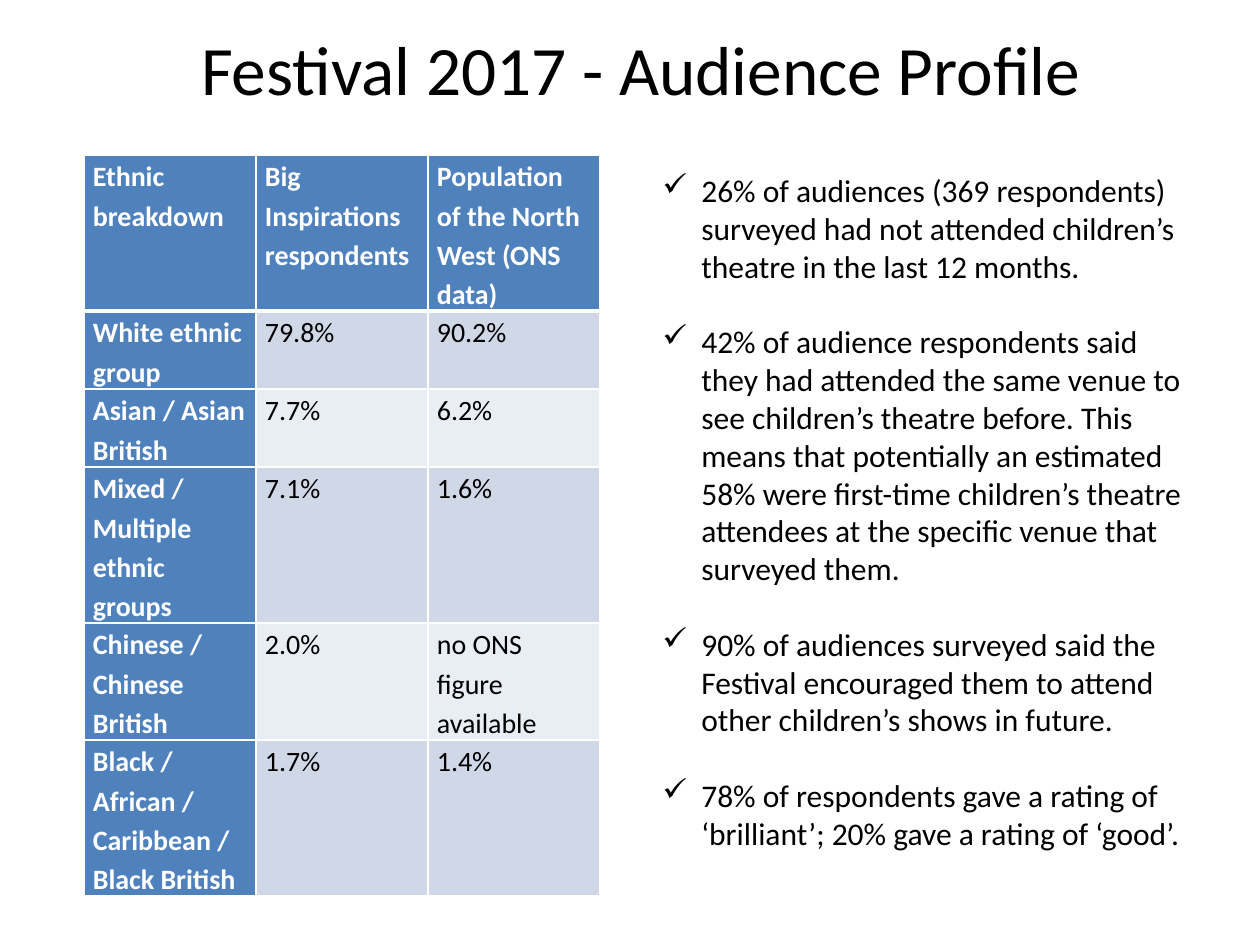
import pptx
import pptx.dml.color
import pptx.enum.text
import pptx.oxml.ns
import pptx.util
from lxml import etree

PX = 914400 // 126
FONT = "Calibri"
BLACK = pptx.dml.color.RGBColor(0x00, 0x00, 0x00)
WHITE = pptx.dml.color.RGBColor(0xFF, 0xFF, 0xFF)
BLUE = pptx.dml.color.RGBColor(0x4F, 0x81, 0xBD)
BAND_DARK = pptx.dml.color.RGBColor(0xD0, 0xD8, 0xE8)
BAND_LIGHT = pptx.dml.color.RGBColor(0xE9, 0xED, 0xF4)

TITLE = "Festival 2017 - Audience Profile"
ROWS = [
    ("Ethnic breakdown", "Big Inspirations respondents",
     "Population of the North West (ONS data)"),
    ("White ethnic group", "79.8%", "90.2%"),
    ("Asian / Asian British", "7.7%", "6.2%"),
    ("Mixed / Multiple ethnic groups", "7.1%", "1.6%"),
    ("Chinese / Chinese British", "2.0%", "no ONS figure available"),
    ("Black / African / Caribbean / Black British", "1.7%", "1.4%"),
]
ROW_LINES = [4, 2, 2, 4, 3, 4]
LINE_HEIGHT = 39
FINDINGS = [
    "26% of audiences (369 respondents) surveyed had not attended children’s "
    "theatre in the last 12 months.",
    "42% of audience respondents said they had attended the same venue to see "
    "children’s theatre before. This means that potentially an estimated 58% were "
    "first-time children’s theatre attendees at the specific venue that surveyed them.",
    "90% of audiences surveyed said the Festival encouraged them to attend other "
    "children’s shows in future.",
    "78% of respondents gave a rating of ‘brilliant’; 20% gave a rating of ‘good’.",
]


def px(n):
    """Turn whole pixels into EMU."""
    return pptx.util.Emu(n * PX)


def write(p, text, size, color, bold=False):
    """Set a paragraph's text and format its run."""
    p.text = text
    font = p.runs[0].font
    font.name = FONT
    font.size = pptx.util.Pt(size)
    font.bold = bold
    font.color.rgb = color


def add_text_frame(slide, x, y, w, h):
    """Add a wrapping text box and return its text frame."""
    tf = slide.shapes.add_textbox(px(x), px(y), px(w), px(h)).text_frame
    tf.word_wrap = True
    return tf


def add_title(slide, x, y, w, h):
    """Add the centred slide title."""
    tf = add_text_frame(slide, x, y, w, h)
    tf.margin_top = px(79)
    p = tf.paragraphs[0]
    p.alignment = pptx.enum.text.PP_ALIGN.CENTER
    write(p, TITLE, 39.6, BLACK)


def set_border(cell, side, points):
    """Draw one white border of a cell."""
    tc_pr = cell._tc.get_or_add_tcPr()
    ln = etree.SubElement(tc_pr, pptx.oxml.ns.qn(f"a:ln{side}"),
                          w=str(pptx.util.Pt(points)))
    fill = etree.SubElement(ln, pptx.oxml.ns.qn("a:solidFill"))
    etree.SubElement(fill, pptx.oxml.ns.qn("a:srgbClr"), val=str(WHITE))


def style_cell(cell, text, row, col):
    """Fill in one table cell according to its row and column."""
    heading = row == 0 or col == 0
    cell.margin_left = cell.margin_right = px(9)
    cell.margin_top = cell.margin_bottom = 0
    p = cell.text_frame.paragraphs[0]
    write(p, text, 16, WHITE if heading else BLACK, heading)
    p.line_spacing = 1.15
    widths = {"L": 1, "R": 1, "T": 3 if row == 1 else 1, "B": 3 if row == 0 else 1}
    for side, points in widths.items():
        set_border(cell, side, points)
    cell.fill.solid()
    band = BAND_DARK if row % 2 else BAND_LIGHT
    cell.fill.fore_color.rgb = BLUE if heading else band


def add_ethnicity_table(slide, x, y, w):
    """Add the ethnic breakdown table, its rows sized by line count."""
    h = sum(ROW_LINES) * LINE_HEIGHT
    table = slide.shapes.add_table(len(ROWS), len(ROWS[0]), px(x), px(y),
                                   px(w), px(h)).table
    for row, (values, lines) in enumerate(zip(ROWS, ROW_LINES)):
        table.rows[row].height = px(lines * LINE_HEIGHT)
        for col, text in enumerate(values):
            style_cell(table.cell(row, col), text, row, col)


def add_findings(slide, x, y, w, h):
    """Add the list of findings with tick bullets."""
    tf = add_text_frame(slide, x, y, w, h)
    for i, text in enumerate(FINDINGS):
        p = tf.add_paragraph() if i else tf.paragraphs[0]
        write(p, text, 18, BLACK)
        p.space_before = pptx.util.Pt(21.6 if i else 0)
        p_pr = p._p.get_or_add_pPr()
        p_pr.set("marL", str(px(39)))
        p_pr.set("indent", str(px(-39)))
        etree.SubElement(p_pr, pptx.oxml.ns.qn("a:buChar"), char="✓")


def main():
    """Build and save the presentation."""
    prs = pptx.Presentation()
    prs.slide_width, prs.slide_height = px(1260), px(945)
    slide = prs.slides.add_slide(prs.slide_layouts[6])
    add_title(slide, 74, -53, 1134, 158)
    add_ethnicity_table(slide, 84, 155, 516)
    add_findings(slide, 650, 165, 546, 738)
    prs.save("out.pptx")


if __name__ == "__main__":
    main()
